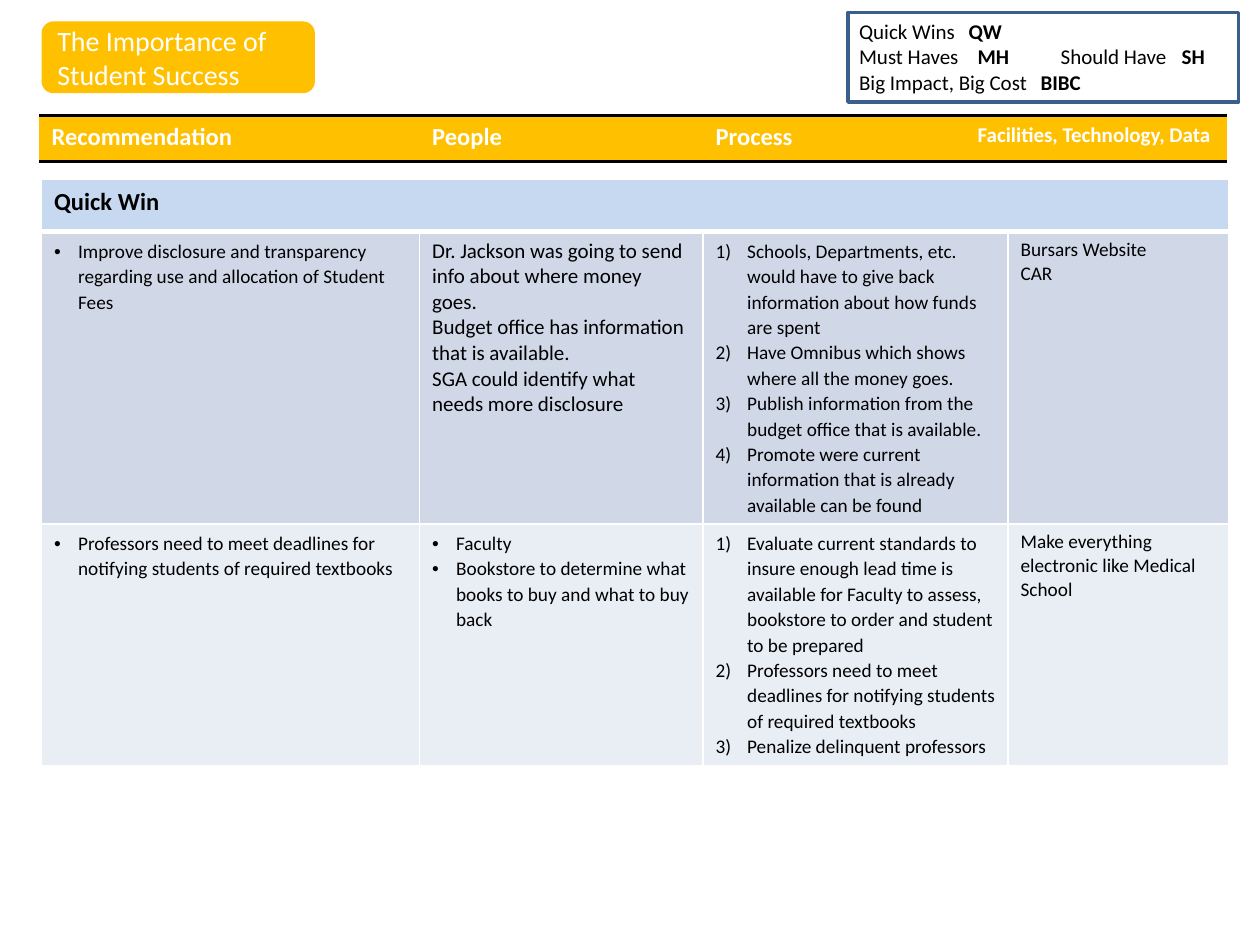
import dataclasses

import lxml.etree
import pptx
import pptx.dml.color
import pptx.enum.shapes
import pptx.enum.text
import pptx.oxml.ns
import pptx.util

Inches = pptx.util.Inches
Pt = pptx.util.Pt
qn = pptx.oxml.ns.qn


@dataclasses.dataclass(frozen=True)
class Theme:
    font: str = "Calibri"
    gold: str = "FFC000"
    white: str = "FFFFFF"
    black: str = "000000"
    frame: str = "3A5F8C"
    section: str = "C6D9F1"
    bands: tuple = ("D0D8E8", "E9EDF4")
    title: int = 16
    heading: int = 14
    body: int = 12
    detail: int = 11


THEME = Theme()
NO_GRID_STYLE = "{2D5ABB26-0587-4C30-8999-92F81FD0307C}"
BULLET = dict(marker=("a:buChar", {"char": "•"}), indent=0.19, spacing=1.07)
NUMBER = dict(marker=("a:buAutoNum", {"type": "arabicParenR"}), indent=0.25, spacing=1.07)

HEADINGS = [
    ("Recommendation", THEME.heading),
    ("People", THEME.heading),
    ("Process", THEME.heading),
    ("Facilities, Technology, Data", THEME.body),
]
QUICK_WINS = [
    [
        (["Improve disclosure and transparency regarding use and allocation of Student Fees"], BULLET),
        (["Dr. Jackson was going to send info about where money goes.",
          "Budget office has information that is available.",
          "SGA could identify what needs more disclosure"], dict(size=THEME.body)),
        (["Schools, Departments, etc. would have to give back information about how funds are spent",
          "Have Omnibus which shows where all the money goes.",
          "Publish information from the budget office that is available.",
          "Promote were current information that is already available can be found"], NUMBER),
        (["Bursars Website", "CAR"], {}),
    ],
    [
        (["Professors need to meet deadlines for notifying students of required textbooks"], BULLET),
        (["Faculty", "Bookstore to determine what books to buy and what to buy back"], BULLET),
        (["Evaluate current standards to insure enough lead time is available for Faculty to assess, "
          "bookstore to order and student to be prepared",
          "Professors need to meet deadlines for notifying students of required textbooks",
          "Penalize delinquent professors"], NUMBER),
        (["Make everything electronic like Medical School"], {}),
    ],
]
LEGEND = [
    ([("Quick Wins\t", False), ("QW", True)], [0.87]),
    ([("Must Haves\t", False), ("MH", True), ("\tShould Have\t", False), ("SH", True)],
     [0.94, 1.6, 2.56]),
    ([("Big Impact, Big Cost\t", False), ("BIBC", True)], [1.44]),
]


def rgb(value):
    return pptx.dml.color.RGBColor.from_string(value)


def write_text(paragraph, text, size=THEME.detail, color=THEME.black, bold=False,
               marker=None, indent=0, spacing=None, tabs=()):
    runs = [(text, bold)] if isinstance(text, str) else text
    paragraph.alignment = pptx.enum.text.PP_ALIGN.LEFT
    if spacing:
        paragraph.line_spacing = spacing
    properties = paragraph._p.get_or_add_pPr()
    if marker:
        properties.set("marL", str(Inches(indent)))
        properties.set("indent", str(-Inches(indent)))
        tag, attributes = marker
        lxml.etree.SubElement(properties, qn("a:buFont"), typeface="Arial" if tag == "a:buChar" else "+mj-lt")
        lxml.etree.SubElement(properties, qn(tag), attributes)
    if tabs:
        stops = lxml.etree.SubElement(properties, qn("a:tabLst"))
        for position in tabs:
            lxml.etree.SubElement(stops, qn("a:tab"), pos=str(Inches(position)), algn="l")
    for words, strong in runs:
        run = paragraph.add_run()
        run.text = words
        run.font.name = THEME.font
        run.font.size = Pt(size)
        run.font.bold = strong
        run.font.color.rgb = rgb(color)


def write_lines(frame, lines, **style):
    frame.word_wrap = True
    for index, line in enumerate(lines):
        paragraph = frame.add_paragraph() if index else frame.paragraphs[0]
        write_text(paragraph, line, **style)


def set_borders(cell, color, **widths):
    properties = cell._tc.get_or_add_tcPr()
    for index, (side, width) in enumerate(widths.items()):
        line = lxml.etree.Element(qn(f"a:ln{side}"), w=str(Pt(width)))
        fill = lxml.etree.SubElement(line, qn("a:solidFill"))
        lxml.etree.SubElement(fill, qn("a:srgbClr"), val=color)
        properties.insert(index, line)


def paint(cell, color):
    cell.fill.solid()
    cell.fill.fore_color.rgb = rgb(color)


def add_grid(slide, left, top, columns, rows):
    table = slide.shapes.add_table(
        len(rows), len(columns), Inches(left), Inches(top),
        Inches(sum(columns)), Inches(sum(rows))).table
    table._tbl.tblPr.find(qn("a:tableStyleId")).text = NO_GRID_STYLE
    table.first_row = table.horz_banding = False
    for column, width in zip(table.columns, columns):
        column.width = Inches(width)
    for row, height in zip(table.rows, rows):
        row.height = Inches(height)
    return table


def add_quick_wins(slide):
    table = add_grid(slide, 0.33, 1.42, [3, 2.25, 2.42, 1.75], [0.42, 2.32, 1.9])
    section = table.cell(0, 0)
    section.merge(table.cell(0, 3))
    write_lines(section.text_frame, ["Quick Win"], size=THEME.heading, bold=True, spacing=1.07)
    for cell in table.rows[0].cells:
        paint(cell, THEME.section)
        set_borders(cell, THEME.white, L=1, R=1, T=1, B=3)
    for index, (contents, band) in enumerate(zip(QUICK_WINS, THEME.bands), start=1):
        for cell, (lines, style) in zip(table.rows[index].cells, contents):
            write_lines(cell.text_frame, lines, **style)
            paint(cell, band)
            set_borders(cell, THEME.white, L=1, R=1, T=3 if index == 1 else 1, B=1)


def add_headings(slide):
    table = add_grid(slide, 0.31, 0.92, [3.02, 2.25, 2.08, 2.08], [0.36])
    for cell, (heading, size) in zip(table.rows[0].cells, HEADINGS):
        write_lines(cell.text_frame, [heading], size=size, color=THEME.white, bold=True)
        paint(cell, THEME.gold)
        set_borders(cell, THEME.black, T=2, B=2)


def add_title(slide):
    title = slide.shapes.add_shape(
        pptx.enum.shapes.MSO_SHAPE.ROUNDED_RECTANGLE,
        Inches(0.33), Inches(0.17), Inches(2.17), Inches(0.57))
    title.shadow.inherit = False
    title.fill.solid()
    title.fill.fore_color.rgb = rgb(THEME.gold)
    title.line.fill.background()
    title.text_frame.vertical_anchor = pptx.enum.text.MSO_ANCHOR.MIDDLE
    write_lines(title.text_frame, ["The Importance of Student Success"],
                size=THEME.title, color=THEME.white)


def add_legend(slide):
    legend = slide.shapes.add_group_shape()
    key = legend.shapes.add_textbox(Inches(6.72), Inches(0.1), Inches(3), Inches(0.71))
    key.text_frame.word_wrap = True
    for index, (runs, tabs) in enumerate(LEGEND):
        paragraph = key.text_frame.add_paragraph() if index else key.text_frame.paragraphs[0]
        write_text(paragraph, runs, size=THEME.body, tabs=tabs)
    border = legend.shapes.add_shape(
        pptx.enum.shapes.MSO_SHAPE.RECTANGLE,
        Inches(6.73), Inches(0.1), Inches(3.1), Inches(0.71))
    border.shadow.inherit = False
    border.fill.background()
    border.line.color.rgb = rgb(THEME.frame)
    border.line.width = Pt(2)


def main():
    presentation = pptx.Presentation()
    presentation.slide_width = Inches(10)
    presentation.slide_height = Inches(7.5)
    slide = presentation.slides.add_slide(presentation.slide_layouts[6])
    add_quick_wins(slide)
    add_headings(slide)
    add_title(slide)
    add_legend(slide)
    presentation.save("out.pptx")


if __name__ == "__main__":
    main()
